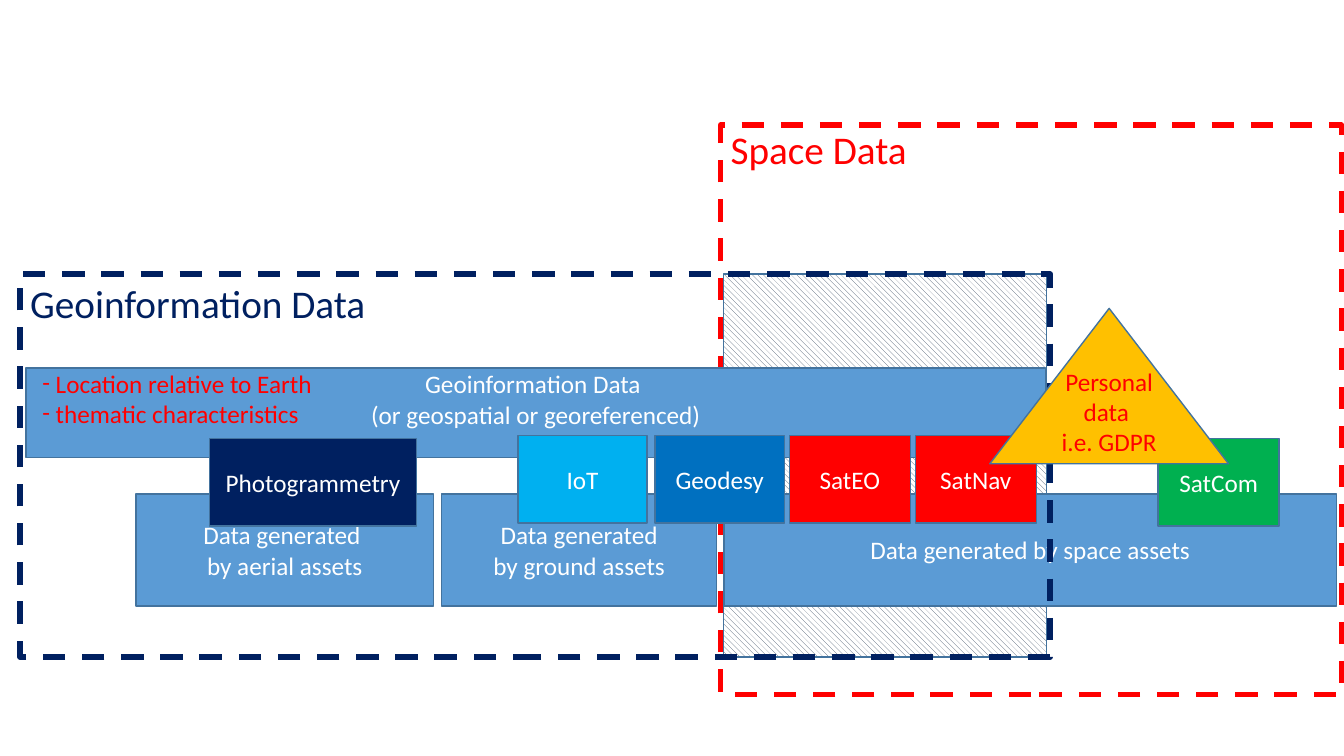
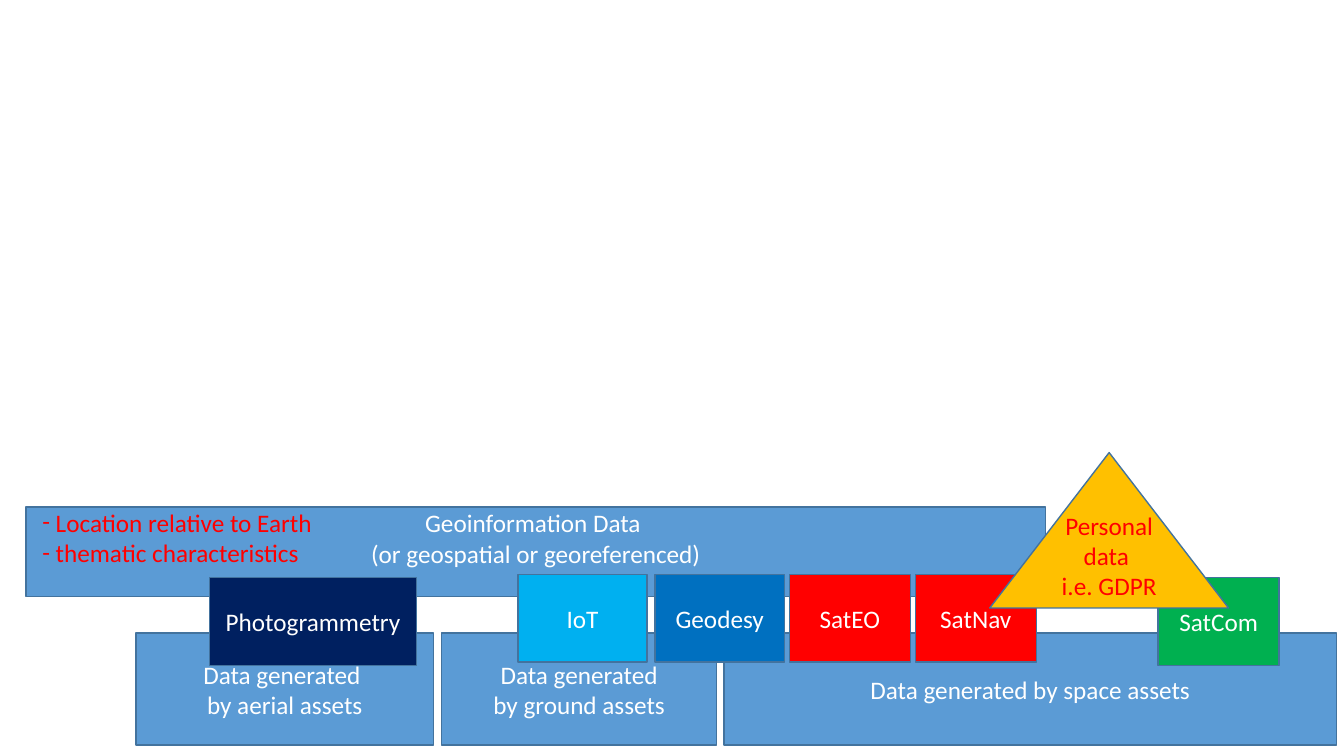
from dataclasses import dataclass

from lxml import etree
from pptx import Presentation
from pptx.dml.color import RGBColor
from pptx.enum import dml, shapes, text
from pptx.oxml import ns
from pptx.shapes.autoshape import Shape
from pptx.slide import Slide
from pptx.util import Pt


@dataclass(frozen=True)
class Theme:
    font: str = "Calibri"
    heading_size: float = 28
    body_size: float = 18
    outline_width: float = 1
    frame_width: float = 4
    white: str = "FFFFFF"
    red: str = "FF0000"
    navy: str = "002060"
    band: str = "5B9BD5"
    sky: str = "00B0F0"
    blue: str = "0070C0"
    green: str = "00B050"
    amber: str = "FFC000"
    slate: str = "44546A"
    outline: str = "43739E"


THEME = Theme()


@dataclass(frozen=True)
class Box:
    left: float
    top: float
    width: float
    height: float

    def lowered(self, distance: float) -> "Box":
        return Box(self.left, self.top + distance, self.width, self.height)


@dataclass(frozen=True)
class Block:
    """A filled shape with centred text; each line is one run."""
    box: Box
    fill: str
    lines: tuple[str, ...]
    color: str = THEME.white
    kind: shapes.MSO_SHAPE = shapes.MSO_SHAPE.RECTANGLE
    anchor: text.MSO_ANCHOR = text.MSO_ANCHOR.MIDDLE
    inset: float = 3.6


ASSET_TOP, ASSET_HEIGHT = 352.8, 80
TAG_TOP, TAG_HEIGHT = 311, 62.6
LOW_TAG_TOP = TAG_TOP + 2.3
SPACE_LEFT = 517


def asset(left: float, width: float, *lines: str) -> Block:
    return Block(Box(left, ASSET_TOP, width, ASSET_HEIGHT), THEME.band, lines)


def tag(left: float, width: float, fill: str, label: str, top: float = TAG_TOP) -> Block:
    return Block(Box(left, top, width, TAG_HEIGHT), fill, (label,))


BLOCKS = (
    Block(Box(18.7, 262.8, 728, 64), THEME.band,
          ("Geoinformation Data ", "(or geospatial or georeferenced)"),
          anchor=text.MSO_ANCHOR.TOP, inset=0.5),
    asset(SPACE_LEFT, 437.8, "Data generated by space assets"),
    tag(653.8, 86.4, THEME.red, "SatNav"),
    tag(563.8, 86.4, THEME.red, "SatEO"),
    tag(827.3, 86.4, THEME.green, "SatCom", LOW_TAG_TOP),
    asset(315.4, 196.6, "Data generated", "by ground assets"),
    asset(97.2, 212.4, "Data generated ", "by aerial assets"),
    tag(468, 92.2, THEME.blue, "Geodesy"),
    tag(149.8, 147.6, THEME.navy, "Photogrammetry", LOW_TAG_TOP),
    tag(370, 92.2, THEME.sky, "IoT"),
)
PERSONAL_DATA = Block(
    Box(707, 220.3, 170.6, 111), THEME.amber, ("Personal data ", "i.e. GDPR"),
    THEME.red, shapes.MSO_SHAPE.ISOSCELES_TRIANGLE, text.MSO_ANCHOR.BOTTOM, 5)

CHARACTERISTICS_BOX = Box(23, 259.2, 213, 51)
CHARACTERISTICS = ("Location relative to Earth", "thematic characteristics")
SPACE_FRAME = Box(514.8, 89.3, 443.5, 406.8)
GEO_FRAME = Box(14.4, 195.8, 735.8, 273.6)
OVERLAP = Box(SPACE_LEFT, GEO_FRAME.top, 230.4, GEO_FRAME.height)


def place(shape: Shape, box: Box) -> None:
    shape.left, shape.top = Pt(box.left), Pt(box.top)
    shape.width, shape.height = Pt(box.width), Pt(box.height)


def add_shape(slide: Slide, kind: shapes.MSO_SHAPE, box: Box) -> Shape:
    shape = slide.shapes.add_shape(
        kind, Pt(box.left), Pt(box.top), Pt(box.width), Pt(box.height))
    shape.shadow.inherit = False
    return shape


def set_line(shape: Shape, color: str, width: float) -> None:
    shape.line.color.rgb = RGBColor.from_string(color)
    shape.line.width = Pt(width)


def add_run(paragraph, words: str, size: float, color: str) -> None:
    run = paragraph.add_run()
    run.text = words
    run.font.name = THEME.font
    run.font.size = Pt(size)
    run.font.color.rgb = RGBColor.from_string(color)


def set_frame(shape: Shape, anchor: text.MSO_ANCHOR, inset: float = 3.6):
    """Set wrapping, anchor and insets; return the text frame."""
    frame = shape.text_frame
    frame.word_wrap = True
    frame.auto_size = text.MSO_AUTO_SIZE.NONE
    frame.vertical_anchor = anchor
    frame.margin_left = frame.margin_right = Pt(7.2)
    frame.margin_top = frame.margin_bottom = Pt(inset)
    return frame


def draw_block(slide: Slide, block: Block, drop: float) -> None:
    shape = add_shape(slide, block.kind, block.box.lowered(drop))
    shape.fill.solid()
    shape.fill.fore_color.rgb = RGBColor.from_string(block.fill)
    set_line(shape, THEME.outline, THEME.outline_width)
    paragraph = set_frame(shape, block.anchor, block.inset).paragraphs[0]
    paragraph.alignment = text.PP_ALIGN.CENTER
    for index, line in enumerate(block.lines):
        if index:
            paragraph.add_line_break()
        add_run(paragraph, line, THEME.body_size, block.color)


def draw_frame(shape: Shape, label: str, color: str, inset: float) -> None:
    """Turn a shape into a dashed, unfilled frame with a heading at top left."""
    shape.fill.background()
    set_line(shape, color, THEME.frame_width)
    shape.line.dash_style = dml.MSO_LINE.DASH
    paragraph = set_frame(shape, text.MSO_ANCHOR.TOP, inset).paragraphs[0]
    paragraph.alignment = text.PP_ALIGN.LEFT
    add_run(paragraph, label, THEME.heading_size, color)


def draw_overlap(slide: Slide) -> None:
    shape = add_shape(slide, shapes.MSO_SHAPE.RECTANGLE, OVERLAP)
    shape.fill.patterned()
    shape.fill.pattern = dml.MSO_PATTERN.WIDE_DOWNWARD_DIAGONAL
    shape.fill.fore_color.rgb = RGBColor.from_string(THEME.slate)
    shape.fill.back_color.rgb = RGBColor.from_string(THEME.white)
    set_line(shape, THEME.outline, THEME.outline_width)


def bring_to_front(slide: Slide, shape: Shape) -> None:
    slide.shapes.element.append(shape.element)


def set_dash_bullet(paragraph, indent: float) -> None:
    properties = paragraph._p.get_or_add_pPr()
    properties.set("marL", str(Pt(indent)))
    properties.set("indent", str(-Pt(indent)))
    etree.SubElement(properties, ns.qn("a:buFont"), typeface=THEME.font)
    etree.SubElement(properties, ns.qn("a:buChar"), char="-")


def draw_characteristics(slide: Slide, drop: float) -> None:
    body = slide.placeholders[1]
    place(body, CHARACTERISTICS_BOX.lowered(drop))
    bring_to_front(slide, body)
    frame = set_frame(body, text.MSO_ANCHOR.TOP)
    for index, words in enumerate(CHARACTERISTICS):
        paragraph = frame.add_paragraph() if index else frame.paragraphs[0]
        paragraph.line_spacing = 1.0
        paragraph.space_before = Pt(0)
        set_dash_bullet(paragraph, 9.6)
        add_run(paragraph, words, THEME.body_size, THEME.red)


def draw_slide(presentation, framed: bool, drop: float = 0, triangle_drop: float = 0) -> None:
    """Draw the data blocks, lowered by drop, with or without the two frames."""
    slide = presentation.slides.add_slide(presentation.slide_layouts[1])
    title = slide.shapes.title
    if framed:
        space = add_shape(slide, shapes.MSO_SHAPE.RECTANGLE, SPACE_FRAME)
        draw_frame(space, "Space Data", THEME.red, 0)
        draw_overlap(slide)
    for block in BLOCKS:
        draw_block(slide, block, drop)
    draw_characteristics(slide, drop)
    if framed:
        place(title, GEO_FRAME)
        draw_frame(title, "Geoinformation Data", THEME.navy, 3.6)
        bring_to_front(slide, title)
    else:
        slide.shapes.element.remove(title.element)
    draw_block(slide, PERSONAL_DATA, triangle_drop)


def main() -> None:
    presentation = Presentation()
    presentation.slide_width, presentation.slide_height = Pt(960), Pt(540)
    draw_slide(presentation, framed=True)
    draw_slide(presentation, framed=False, drop=99.4, triangle_drop=103)
    presentation.save("out.pptx")


if __name__ == "__main__":
    main()
